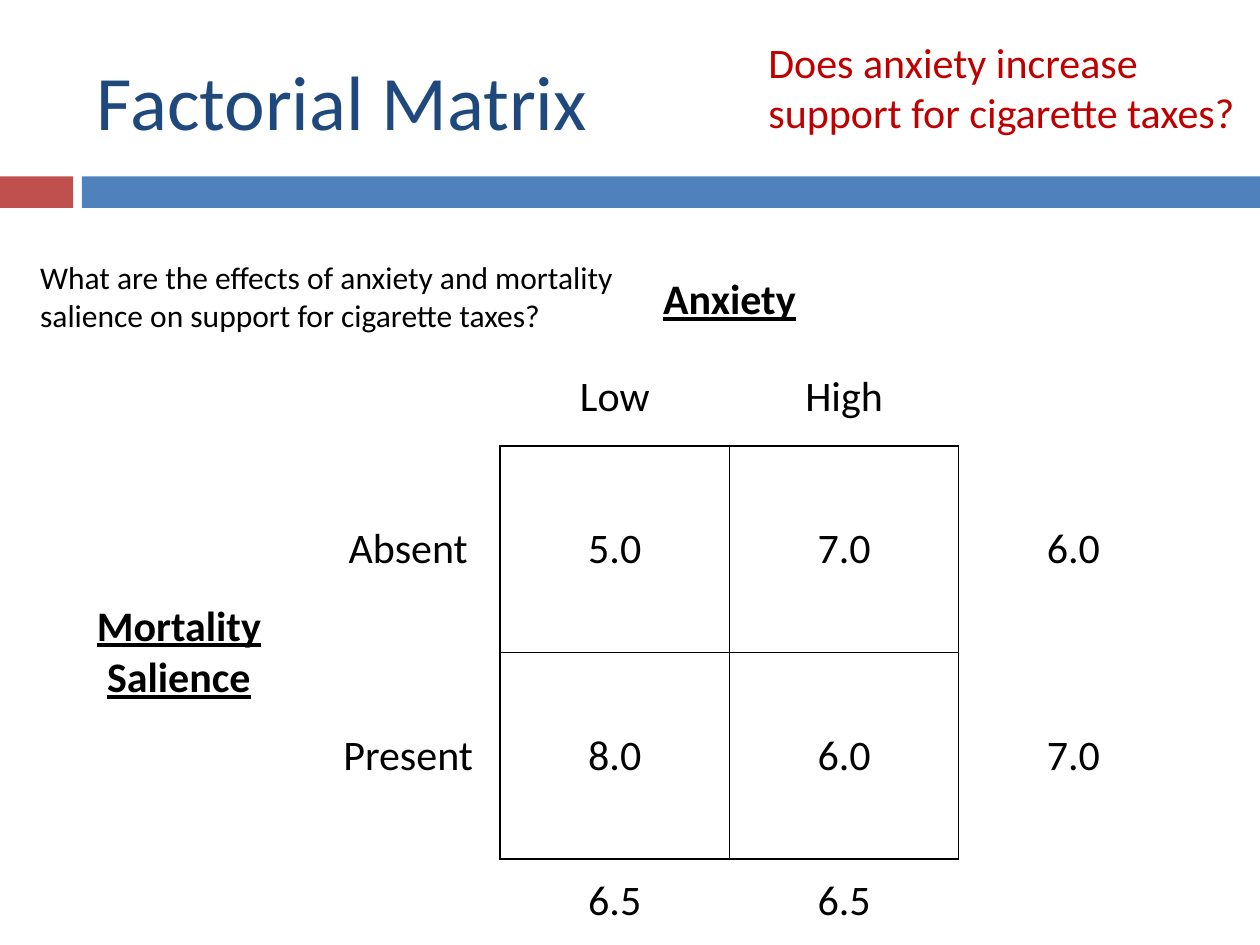
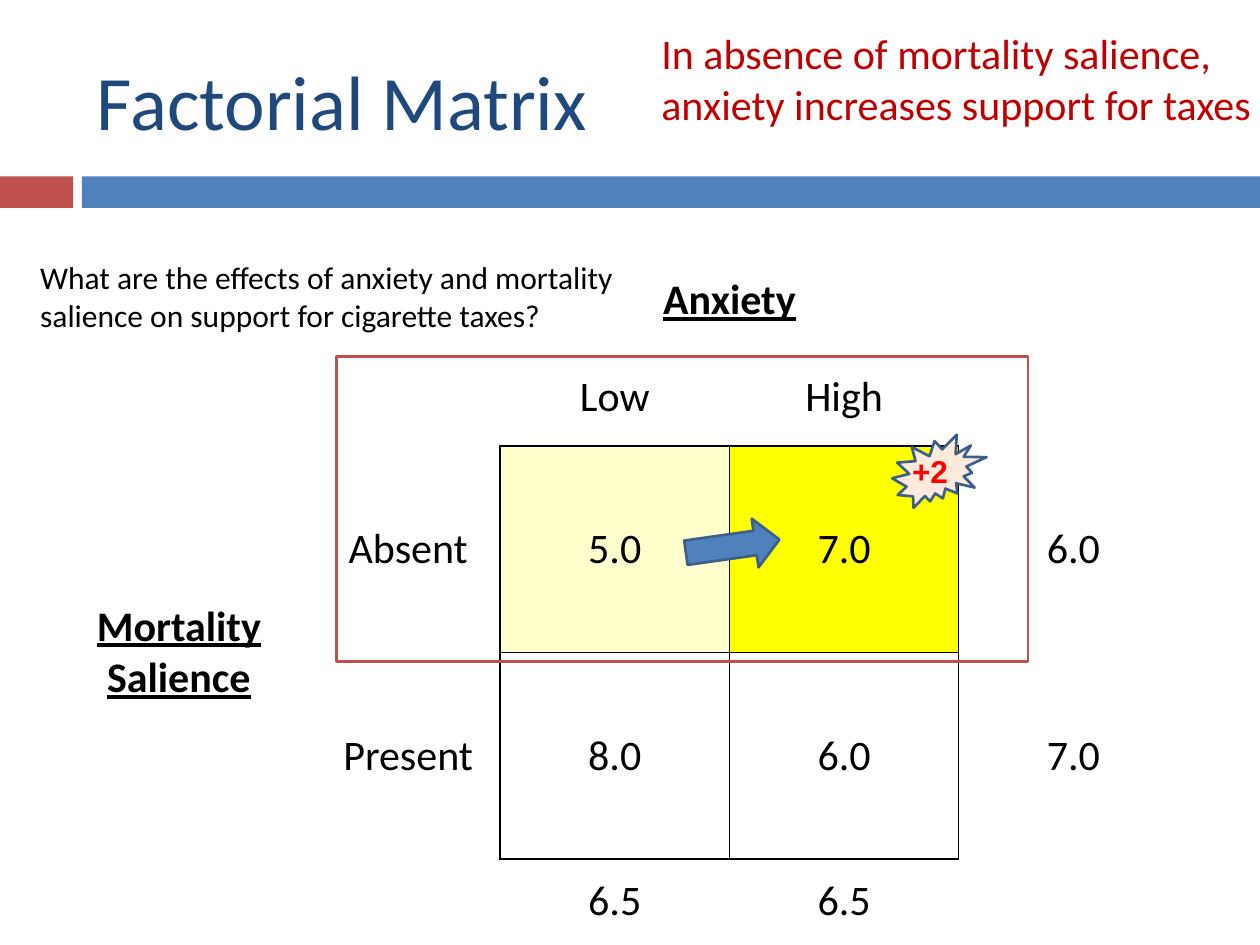
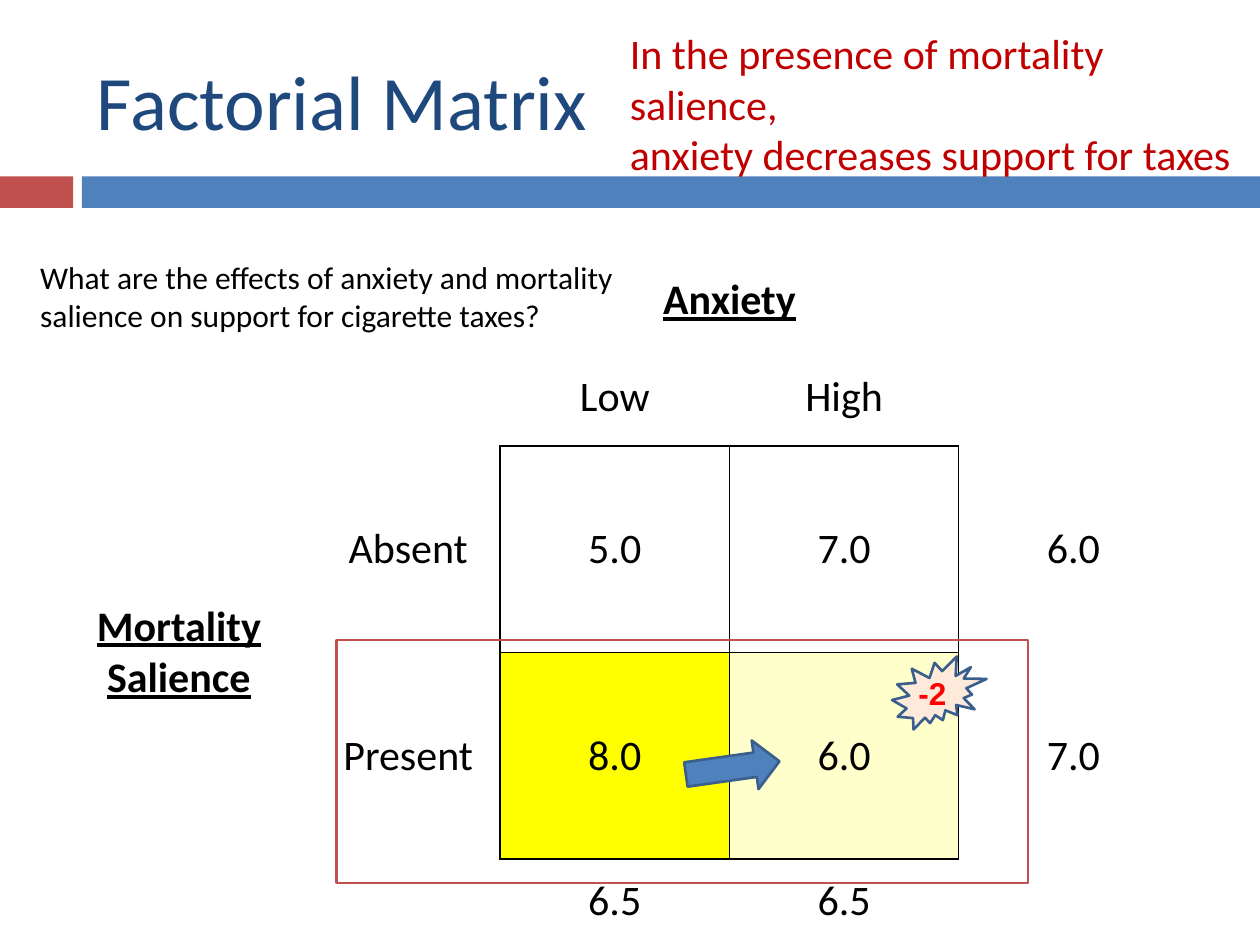
from lxml.etree import SubElement
from pptx import Presentation
from pptx.dml.color import RGBColor
from pptx.enum.shapes import MSO_SHAPE
from pptx.enum.text import MSO_ANCHOR, PP_ALIGN
from pptx.oxml.ns import qn
from pptx.util import Inches, Pt

COLORS = {
    "black": "000000", "red_band": "C0504D", "blue": "4F81BD", "title": "1F497D",
    "finding": "C00000", "outline": "3A5F8C", "seal": "FDEADA", "change": "FF0000",
    "lower": "FFFFCC", "higher": "FFFF00",
}
NO_STYLE = "{2D5ABB26-0587-4C30-8999-92F81FD0307C}"
QUESTION = ("What are the effects of anxiety and mortality\n"
            "salience on support for cigarette taxes?")
MATRIX = [
    ["", "", "Anxiety", "", ""],
    ["", "", "Low", "High", ""],
    ["Mortality\nSalience", "Absent", "5.0", "7.0", "6.0"],
    ["", "Present", "8.0", "6.0", "7.0"],
    ["", "", "6.5", "6.5", ""],
]
FACTOR_NAMES = {(0, 2), (2, 0)}
MEANS = {(row, column) for row in (2, 3) for column in (2, 3)}
COLUMN_WIDTHS = [2.18, 1.46, 1.82, 1.82, 1.82]
ROW_HEIGHTS = [0.77, 0.77, 1.64, 1.64, 0.67]


def color(name):
    return RGBColor.from_string(COLORS[name])


class Deck:
    """Holds the shared style and the current slide."""

    def __init__(self):
        self.presentation = Presentation()
        self.presentation.slide_width = Inches(10)
        self.presentation.slide_height = Inches(7.5)
        self.slide = None

    def start_slide(self, title):
        self.slide = self.presentation.slides.add_slide(self.presentation.slide_layouts[6])
        self.shape(MSO_SHAPE.RECTANGLE, 0, 1.4, 0.58, 0.25, fill="red_band")
        self.shape(MSO_SHAPE.RECTANGLE, 0.65, 1.4, 9.35, 0.25, fill="blue")
        self.text(title, 0.67, 0.25, 8.92, 1.08, 44, "title", anchor=MSO_ANCHOR.MIDDLE)

    def style_text(self, text_frame, size, color_name, font="Calibri", bold=False,
                   underline=False, align=PP_ALIGN.LEFT):
        for paragraph in text_frame.paragraphs:
            paragraph.alignment = align
            paragraph.font.name = font
            paragraph.font.size = Pt(size)
            paragraph.font.bold = bold
            paragraph.font.underline = underline
            paragraph.font.color.rgb = color(color_name)

    def text(self, text, left, top, width, height, size, color_name,
             anchor=MSO_ANCHOR.TOP, **style):
        box = self.slide.shapes.add_textbox(
            Inches(left), Inches(top), Inches(width), Inches(height))
        text_frame = box.text_frame
        text_frame.word_wrap = True
        text_frame.vertical_anchor = anchor
        text_frame.text = text
        self.style_text(text_frame, size, color_name, **style)

    def shape(self, kind, left, top, width, height, fill=None, line=None, rotation=0):
        shape = self.slide.shapes.add_shape(
            kind, Inches(left), Inches(top), Inches(width), Inches(height))
        shape.shadow.inherit = False
        shape.rotation = rotation
        if fill:
            shape.fill.solid()
            shape.fill.fore_color.rgb = color(fill)
        else:
            shape.fill.background()
        if line:
            shape.line.color.rgb = color(line)
            shape.line.width = Pt(1.5)
        else:
            shape.line.fill.background()

    def border_cell(self, cell):
        properties = cell._tc.get_or_add_tcPr()
        for side in ("lnL", "lnR", "lnT", "lnB"):
            line = SubElement(properties, qn(f"a:{side}"), w=str(Pt(1)))
            fill = SubElement(line, qn("a:solidFill"))
            SubElement(fill, qn("a:srgbClr"), val=COLORS["black"])

    def matrix(self, highlights):
        frame = self.slide.shapes.add_table(
            len(ROW_HEIGHTS), len(COLUMN_WIDTHS), Inches(0.33), Inches(2),
            Inches(sum(COLUMN_WIDTHS)), Inches(sum(ROW_HEIGHTS)))
        table = frame.table
        table.first_row = table.horz_banding = False
        table._tbl.tblPr.find(qn("a:tableStyleId")).text = NO_STYLE
        for column, width in zip(table.columns, COLUMN_WIDTHS):
            column.width = Inches(width)
        for row, height in zip(table.rows, ROW_HEIGHTS):
            row.height = Inches(height)
        table.cell(0, 2).merge(table.cell(0, 3))
        table.cell(2, 0).merge(table.cell(3, 0))

        for row, values in enumerate(MATRIX):
            for column, value in enumerate(values):
                place = (row, column)
                cell = table.cell(row, column)
                cell.text = value
                cell.vertical_anchor = MSO_ANCHOR.MIDDLE
                is_factor = place in FACTOR_NAMES
                self.style_text(cell.text_frame, 24, "black", bold=is_factor,
                                underline=is_factor, align=PP_ALIGN.CENTER)
                if place in MEANS:
                    self.border_cell(cell)
                if place in highlights:
                    cell.fill.solid()
                    cell.fill.fore_color.rgb = color(highlights[place])
                else:
                    cell.fill.background()

    def factorial_slide(self, finding, left, top, width, highlights):
        self.start_slide("Factorial Matrix")
        self.matrix(highlights)
        self.text(QUESTION, 0.22, 2, 4.91, 0.71, 18, "black")
        self.text(finding, left, top, width, 0.91, 24, "finding")

    def change_marks(self, change, label_left, top, frame_top, frame_height):
        """Seal with the change, frame round the row, and arrow from low to high."""
        self.shape(MSO_SHAPE.EXPLOSION2, 7.08, top, 0.75, 0.58, "seal", "outline")
        self.text(change, label_left, top + 0.09, 0.51, 0.4, 18, "change",
                  font="Arial", bold=True)
        self.shape(MSO_SHAPE.RECTANGLE, 2.67, frame_top, 5.49, frame_height,
                   line="red_band")
        self.shape(MSO_SHAPE.RIGHT_ARROW, 5.44, top + 0.69, 0.75, 0.39,
                   "blue", "outline", rotation=352)


def main():
    deck = Deck()

    # Question
    deck.factorial_slide("Does anxiety increase\nsupport for cigarette taxes?",
                         6, 0.24, 3.95, {})

    # Mortality salience absent
    deck.factorial_slide(
        "In absence of mortality salience,\nanxiety increases support for taxes",
        5.15, 0.17, 4.95, {(2, 2): "lower", (2, 3): "higher"})
    deck.change_marks("+2", 7.14, 3.45, 2.83, 2.42)

    # Mortality salience present
    deck.factorial_slide(
        "In the presence of mortality salience,\nanxiety decreases support for taxes",
        4.9, 0.17, 5.18, {(3, 2): "higher", (3, 3): "lower"})
    deck.change_marks("-2", 7.19, 5.21, 5.08, 1.93)

    deck.presentation.save("out.pptx")


if __name__ == "__main__":
    main()
